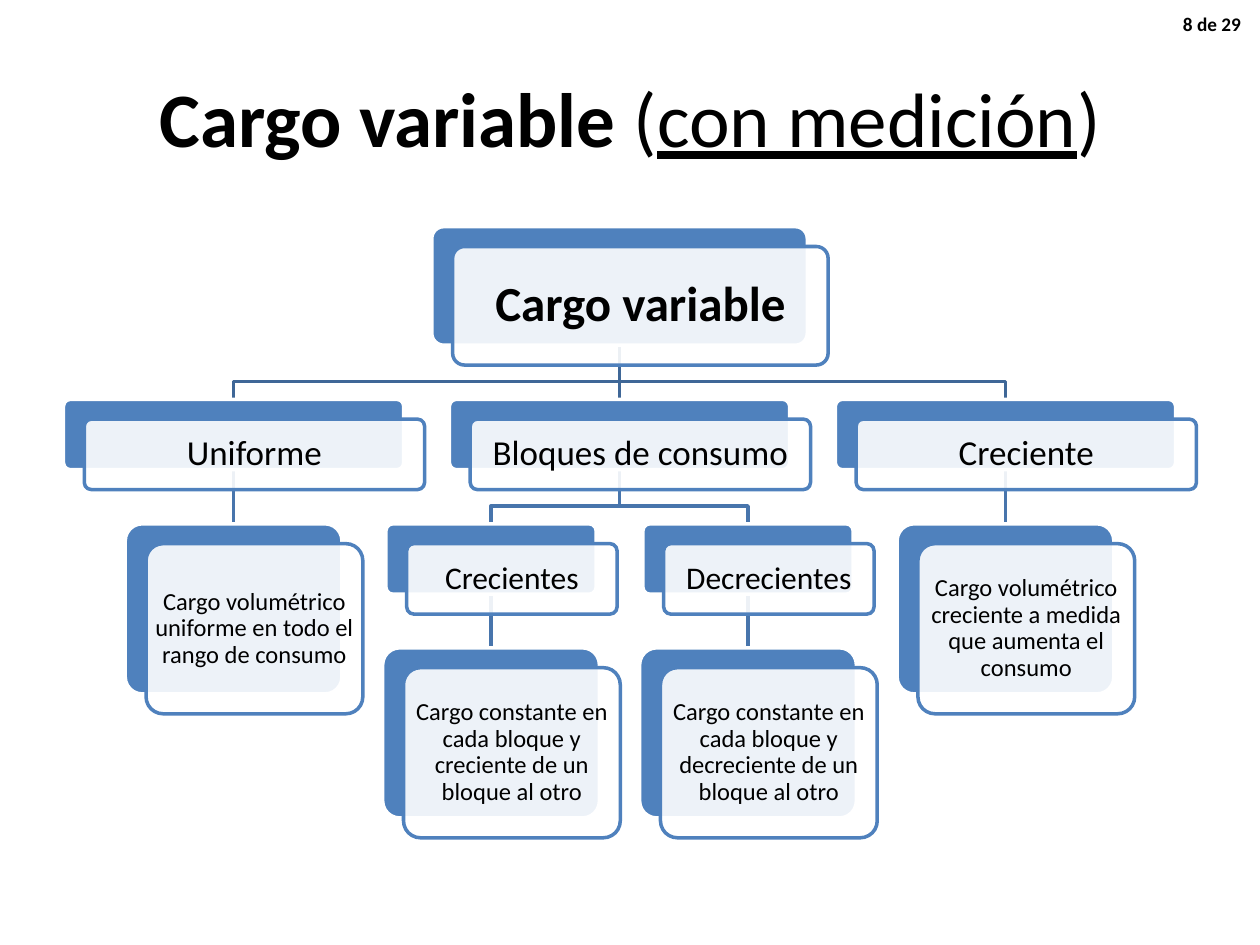
"""Build the slide with the tree of variable charges."""
from lxml.etree import SubElement
from pptx import Presentation
from pptx.dml.color import RGBColor
from pptx.enum.shapes import MSO_CONNECTOR, MSO_SHAPE
from pptx.enum.text import MSO_ANCHOR, PP_ALIGN
from pptx.oxml.ns import qn
from pptx.util import Cm, Pt


def paint(color, code):
    color.rgb = RGBColor.from_string(code)


def style(run, size, bold=False):
    run.font.name = "Calibri"
    run.font.size = Pt(size)
    run.font.bold = bold
    paint(run.font.color, "000000")


deck = Presentation()
deck.slide_width, deck.slide_height = Cm(25.4), Cm(19.05)
slide = deck.slides.add_slide(deck.slide_layouts[6])
shapes = slide.shapes

title = shapes.add_textbox(Cm(1.27), Cm(0.76), Cm(22.86), Cm(3.18)).text_frame
title.word_wrap = True
title.vertical_anchor = MSO_ANCHOR.MIDDLE
para = title.paragraphs[0]
para.alignment = PP_ALIGN.CENTER
for text, bold, under in [("Cargo variable", True, False), (" (", False, False),
                          ("con medición", False, True), (")", False, False)]:
    run = para.add_run()
    run.text = text
    style(run, 44, bold)
    run.font.underline = under

mid, step, half = 12.49, 7.78, 2.59
tops = [4.57, 8.05, 10.56, 13.06]
kinds = {
    "root": (7.57, 2.39, 28, 0.25),
    "type": (6.86, 1.42, 20, 0.2),
    "block": (4.24, 1.42, 18, 0.15),
    "note": (4.37, 3.43, 14, 0.05),
    "inset": (4.37, 3.43, 14, 0.15),
}
nodes = [
    ("Cargo variable", "root", mid, 0, None),
    ("Uniforme", "type", mid - step, 1, 0),
    ("Cargo volumétrico uniforme en todo el rango de consumo", "note", mid - step, 2, 1),
    ("Bloques de consumo", "type", mid, 1, 0),
    ("Crecientes", "block", mid - half, 2, 3),
    ("Cargo constante en cada bloque y creciente de un bloque al otro",
     "inset", mid - half, 3, 4),
    ("Decrecientes", "block", mid + half, 2, 3),
    ("Cargo constante en cada bloque y decreciente de un bloque al otro",
     "inset", mid + half, 3, 6),
    ("Creciente", "type", mid + step, 1, 0),
    ("Cargo volumétrico creciente a medida que aumenta el consumo",
     "note", mid + step, 2, 8),
]

for text, kind, x, row, up in nodes:
    if up is None:
        continue
    above = nodes[up]
    left, top = above[2], tops[above[3]] + kinds[above[1]][1]
    end = tops[row]
    if left == x:
        link = shapes.add_connector(MSO_CONNECTOR.STRAIGHT, Cm(x), Cm(top), Cm(x), Cm(end))
        SubElement(link._element.spPr, qn("a:effectLst"))
    else:
        bend = end - 0.36
        path = shapes.build_freeform(Cm(left), Cm(top))
        path.add_line_segments([(Cm(left), Cm(bend)), (Cm(x), Cm(bend)),
                                (Cm(x), Cm(end))], close=False)
        link = path.convert_to_shape()
        link.fill.background()
        link.shadow.inherit = False
    paint(link.line.color, "3F6797" if row == 1 else "4875AC")
    link.line.width = Pt(2)

for text, kind, x, row, up in nodes:
    wide, high, size, pad = kinds[kind]
    for shift, fill, edge in [(0, "4F81BD", "FFFFFF"), (1, "FFFFFF", "4F81BD")]:
        box = shapes.add_shape(MSO_SHAPE.ROUNDED_RECTANGLE,
                               Cm(x - wide / 2 + shift * 0.42),
                               Cm(tops[row] + shift * 0.4), Cm(wide), Cm(high))
        box.adjustments[0] = 0.1
        box.shadow.inherit = False
        box.fill.solid()
        paint(box.fill.fore_color, fill)
        paint(box.line.color, edge)
        box.line.width = Pt(2)
    tint = box.fill._xPr.find(qn("a:solidFill"))[0]
    SubElement(tint, qn("a:alpha"), val="90000")
    frame = box.text_frame
    frame.word_wrap = True
    frame.vertical_anchor = MSO_ANCHOR.MIDDLE
    frame.margin_left = frame.margin_right = Cm(pad)
    frame.margin_top = frame.margin_bottom = Cm(0.1)
    frame.text = text
    para = frame.paragraphs[0]
    para.alignment = PP_ALIGN.CENTER
    para.line_spacing = 0.9
    style(para.runs[0], size, kind == "root")

page = shapes.add_textbox(Cm(23.37), Cm(0.13), Cm(1.9), Cm(0.73)).text_frame
page.text = "8 de 29"
page.word_wrap = True
page.paragraphs[0].alignment = PP_ALIGN.RIGHT
style(page.paragraphs[0].runs[0], 11, True)

deck.save("out.pptx")
